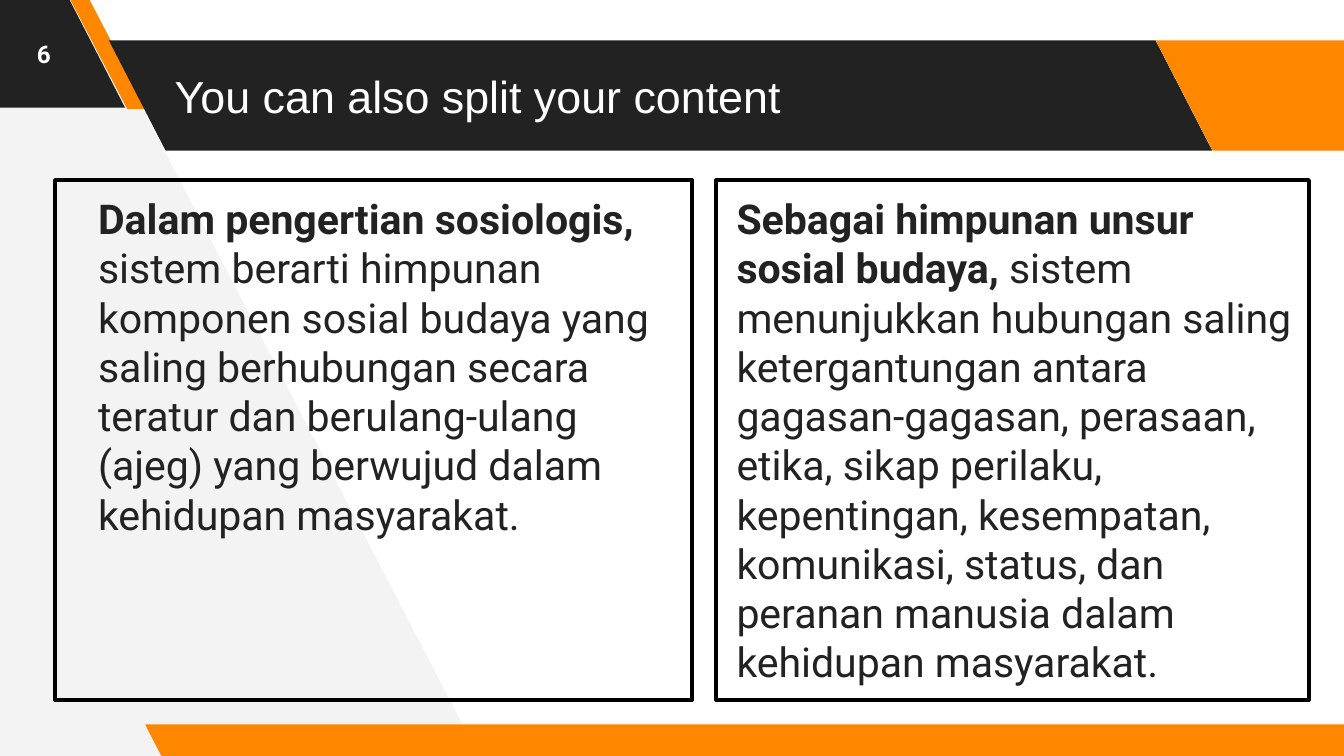
from pptx import Presentation
from pptx.dml.color import RGBColor
from pptx.enum.shapes import MSO_SHAPE
from pptx.enum.text import MSO_ANCHOR, MSO_AUTO_SIZE, PP_ALIGN
from pptx.oxml.ns import qn
from pptx.util import Inches, Pt

DARK = RGBColor(0x22, 0x22, 0x22)
ORANGE = RGBColor(0xFF, 0x87, 0x00)
PALE = RGBColor(0xF3, 0xF3, 0xF3)
WHITE = RGBColor(0xFF, 0xFF, 0xFF)
BLACK = RGBColor(0x00, 0x00, 0x00)

SLANT = 0.515
BAND_HEIGHT = 0.82
PANEL_TOP, PANEL_HEIGHT = 1.34, 3.87


def place(shape, left, top, width, height):
    shape.left, shape.top = Inches(left), Inches(top)
    shape.width, shape.height = Inches(width), Inches(height)


def set_frame(frame, anchor):
    frame.word_wrap = True
    frame.auto_size = MSO_AUTO_SIZE.NONE
    frame.vertical_anchor = anchor
    frame.margin_left = frame.margin_right = Inches(0.1)
    frame.margin_top = frame.margin_bottom = Inches(0.1)


def style(span, name, size, color, bold=False):
    span.font.name, span.font.size = name, Pt(size)
    span.font.color.rgb, span.font.bold = color, bold


def add_slanted_band(page, left, top, width, height, color, slant=SLANT):
    band = page.shapes.add_shape(MSO_SHAPE.PARALLELOGRAM, Inches(left), Inches(top),
                                 Inches(width), Inches(height))
    band.adjustments[0] = slant
    band._element.spPr.find(qn("a:xfrm")).set("flipH", "1")
    band.fill.solid()
    band.fill.fore_color.rgb = color
    band.line.fill.background()
    band.shadow.inherit = False


def add_backdrop(page):
    # Pale wedge on the left
    outline = page.shapes.build_freeform(Inches(3.56), Inches(5.62))
    outline.add_line_segments([(Inches(x), Inches(y)) for x, y in
                               ((0.62, -0.04), (-0.06, -0.04), (-0.02, 5.66))])
    wedge = outline.convert_to_shape()
    wedge.fill.solid()
    wedge.fill.fore_color.rgb = PALE
    wedge.line.fill.background()
    wedge.shadow.inherit = False

    # Corner, header and footer bands
    add_slanted_band(page, -0.99, -0.02, 1.92, BAND_HEIGHT, DARK)
    add_slanted_band(page, 0.52, -0.01, 0.57, BAND_HEIGHT, ORANGE, 0.75)
    add_slanted_band(page, 0.81, 0.3, 8.21, BAND_HEIGHT, DARK)
    add_slanted_band(page, 8.6, 0.3, 1.92, BAND_HEIGHT, ORANGE)
    add_slanted_band(page, 1.08, 5.39, 9.15, 0.25, ORANGE)


def fill_title(page, text, left, top, width, height):
    title = page.shapes.title
    page.shapes._spTree.append(title._element)  # bring above the bands
    place(title, left, top, width, height)
    set_frame(title.text_frame, MSO_ANCHOR.MIDDLE)
    title.text_frame.text = text
    para = title.text_frame.paragraphs[0]
    para.alignment = PP_ALIGN.LEFT
    style(para.runs[0], "Arial", 24, WHITE)


def add_page_number(page, number, left, top, width, height):
    box = page.shapes.add_textbox(Inches(left), Inches(top), Inches(width), Inches(height))
    set_frame(box.text_frame, MSO_ANCHOR.MIDDLE)
    para = box.text_frame.paragraphs[0]
    para.text = number
    para.alignment = PP_ALIGN.CENTER
    style(para.runs[0], "Roboto", 13, WHITE, True)


def fill_panel(page, body, lead, rest, left, width, indent, text_width):
    # Body text, opening with a bold lead
    page.shapes._spTree.append(body._element)
    place(body, left + indent, PANEL_TOP, text_width, PANEL_HEIGHT)
    set_frame(body.text_frame, MSO_ANCHOR.TOP)
    para = body.text_frame.paragraphs[0]
    properties = para._p.get_or_add_pPr()
    properties.set("marL", "0")
    properties.set("indent", "0")
    properties.append(properties.makeelement(qn("a:buNone"), {}))
    para.space_before = Pt(0)
    for text, bold in ((lead, True), (rest, False)):
        span = para.add_run()
        span.text = text
        style(span, "Roboto", 22, DARK, bold)

    # Frame
    border = page.shapes.add_shape(MSO_SHAPE.RECTANGLE, Inches(left), Inches(PANEL_TOP),
                                   Inches(width), Inches(PANEL_HEIGHT))
    border.fill.background()
    border.line.color.rgb = BLACK
    border.line.width = Pt(2)
    border.shadow.inherit = False


def main():
    deck = Presentation()
    deck.slide_width = Inches(10)
    deck.slide_height = deck.slide_width * 9 // 16  # widescreen
    page = deck.slides.add_slide(deck.slide_layouts[3])  # two content
    left_body, right_body = page.placeholders[1], page.placeholders[2]

    add_backdrop(page)
    fill_title(page, "You can also split your content", 1.2, 0.3, 8.28, BAND_HEIGHT)
    add_page_number(page, "6", 0, 0, 0.65, 0.8)
    fill_panel(page, left_body, "Dalam pengertian sosiologis, ",
               "sistem berarti himpunan komponen sosial budaya yang saling berhubungan "
               "secara teratur dan berulang-ulang (ajeg) yang berwujud dalam kehidupan "
               "masyarakat.",
               left=0.41, width=4.74, indent=0.22, text_width=4.42)
    fill_panel(page, right_body, "Sebagai himpunan unsur sosial budaya, ",
               "sistem menunjukkan hubungan saling ketergantungan antara gagasan-gagasan, "
               "perasaan, etika, sikap perilaku, kepentingan, kesempatan, komunikasi, "
               "status, dan peranan manusia dalam kehidupan masyarakat.",
               left=5.33, width=4.41, indent=0.05, text_width=4.36)
    deck.save("out.pptx")


if __name__ == "__main__":
    main()
